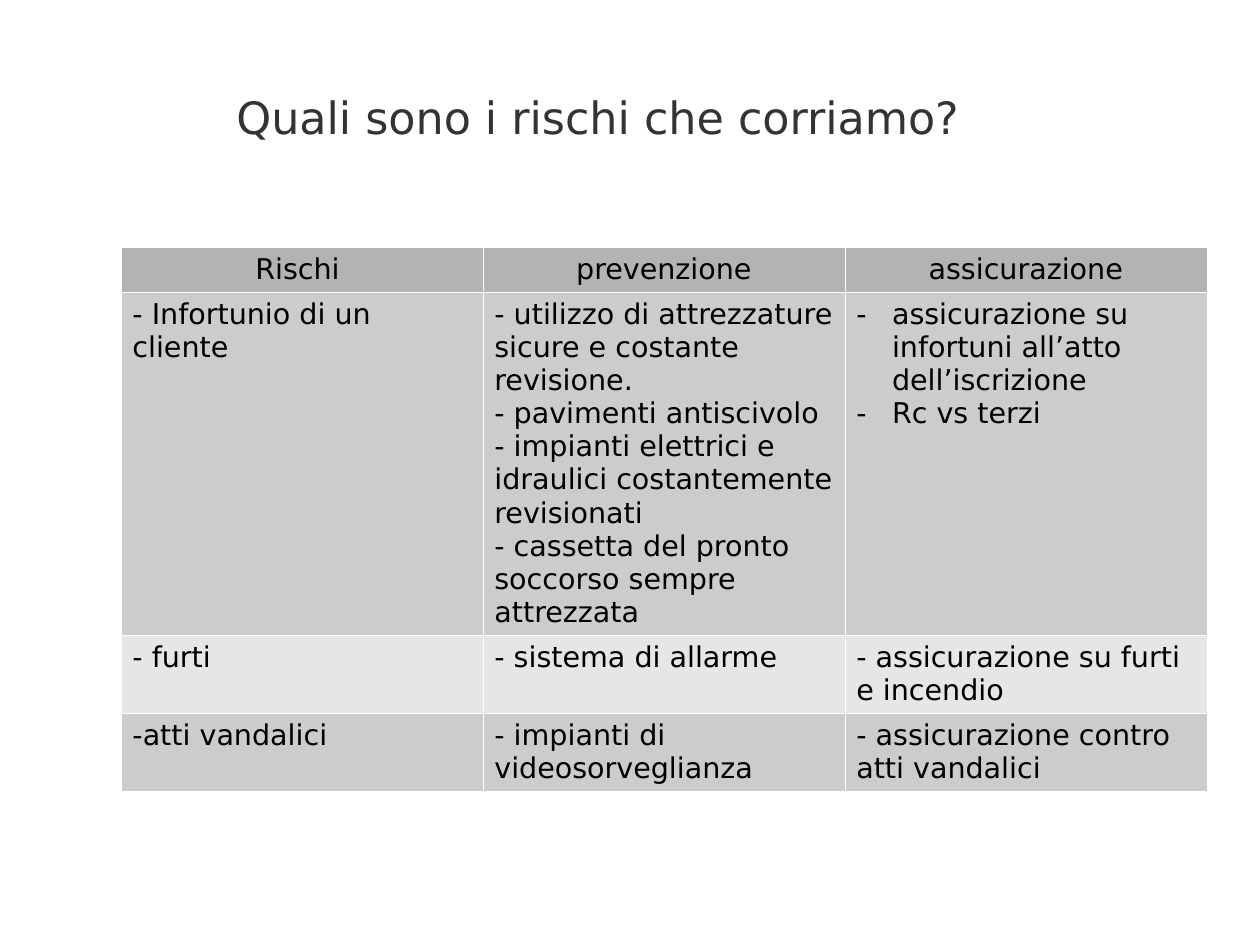
from lxml.etree import SubElement
from pptx import Presentation
from pptx.dml.color import RGBColor
from pptx.enum.text import MSO_ANCHOR, PP_ALIGN
from pptx.oxml.ns import qn
from pptx.util import Pt

COLORS = {
    "background": "FFFFFF",
    "title": "333333",
    "text": "000000",
    "border": "FFFFFF",
    "header": "B3B3B3",
    "odd_row": "CCCCCC",
    "even_row": "E6E6E6",
}

# Each cell is a list of paragraphs
HEADINGS = ["Rischi ", "prevenzione", "assicurazione"]
RISKS = [
    [
        ["- Infortunio di un cliente"],
        [
            "- utilizzo di attrezzature sicure e costante revisione.",
            "- pavimenti antiscivolo",
            "- impianti elettrici e idraulici costantemente revisionati",
            "- cassetta del pronto soccorso sempre attrezzata",
        ],
        ["assicurazione su infortuni all’atto dell’iscrizione", "Rc vs terzi"],
    ],
    [["- furti"], ["- sistema di allarme"], ["- assicurazione su furti e incendio"]],
    [
        ["-atti vandalici"],
        ["- impianti di videosorveglianza"],
        ["- assicurazione contro atti vandalici"],
    ],
]
ROW_HEIGHTS = [28, 216, 49, 49]


class RiskSlide:
    """Holds the style and the current slide."""

    font_name = "DejaVu Sans"
    title_size = 28
    text_size = 18
    bullet_indent = 22.5
    border_width = 0.06

    def __init__(self, presentation):
        self.slide = presentation.slides.add_slide(presentation.slide_layouts[5])
        fill = self.slide.background.fill
        fill.solid()
        fill.fore_color.rgb = RGBColor.from_string(COLORS["background"])

    def format_paragraph(self, paragraph, size, color, alignment):
        paragraph.alignment = alignment
        font_format = {"name": self.font_name, "size": Pt(size), "bold": False}
        for run in paragraph.runs:
            for name, value in font_format.items():
                setattr(run.font, name, value)
            run.font.color.rgb = RGBColor.from_string(COLORS[color])

    def add_title(self, text, left, top, width, height):
        title = self.slide.shapes.title
        place = {"left": left, "top": top, "width": width, "height": height}
        for name, value in place.items():
            setattr(title, name, Pt(value))
        frame = title.text_frame
        frame_format = {
            "margin_left": 0, "margin_right": 0, "margin_top": 0, "margin_bottom": 0,
            "vertical_anchor": MSO_ANCHOR.MIDDLE, "word_wrap": True, "text": text,
        }
        for name, value in frame_format.items():
            setattr(frame, name, value)
        self.format_paragraph(frame.paragraphs[0], self.title_size, "title", PP_ALIGN.CENTER)

    def add_bullet(self, paragraph):
        properties = paragraph._p.get_or_add_pPr()
        indent = Pt(self.bullet_indent)
        properties.set("marL", str(indent))
        properties.set("indent", str(-indent))
        SubElement(properties, qn("a:buFont"), typeface=self.font_name)
        SubElement(properties, qn("a:buChar"), char="-")

    def add_borders(self, cell):
        properties = cell._tc.get_or_add_tcPr()
        for side in ("lnL", "lnR", "lnT", "lnB"):
            line = SubElement(properties, qn(f"a:{side}"), w=str(Pt(self.border_width)))
            fill = SubElement(line, qn("a:solidFill"))
            SubElement(fill, qn("a:srgbClr"), val=COLORS["border"])

    def fill_cell(self, cell, lines, color, alignment):
        self.add_borders(cell)
        cell.fill.solid()
        cell.fill.fore_color.rgb = RGBColor.from_string(COLORS[color])
        cell.text = "\n".join(lines)
        is_list = len(lines) > 1 and not lines[0].startswith("-")
        for paragraph in cell.text_frame.paragraphs:
            if is_list:
                self.add_bullet(paragraph)
            self.format_paragraph(paragraph, self.text_size, "text", alignment)

    def add_table(self, rows, left, top, width, heights):
        frame = self.slide.shapes.add_table(
            len(rows), len(rows[0]), Pt(left), Pt(top), Pt(width), Pt(sum(heights))
        )
        table = frame.table
        for row, height in zip(table.rows, heights):
            row.height = Pt(height)
        for row_index, row in enumerate(rows):
            color, alignment = "header", PP_ALIGN.CENTER
            if row_index:
                color = "odd_row" if row_index % 2 else "even_row"
                alignment = PP_ALIGN.LEFT
            for column_index, lines in enumerate(row):
                self.fill_cell(table.cell(row_index, column_index), lines, color, alignment)


def main():
    presentation = Presentation()
    presentation.slide_width = Pt(793.75)
    presentation.slide_height = Pt(595.25)
    risk_slide = RiskSlide(presentation)

    # Title
    risk_slide.add_title("Quali sono i rischi che corriamo?", 117, 24, 519, 99.25)

    # Table of risks, prevention and insurance
    rows = [[[heading] for heading in HEADINGS]] + RISKS
    risk_slide.add_table(rows, 76.25, 155.75, 684, ROW_HEIGHTS)

    presentation.save("out.pptx")


if __name__ == "__main__":
    main()
